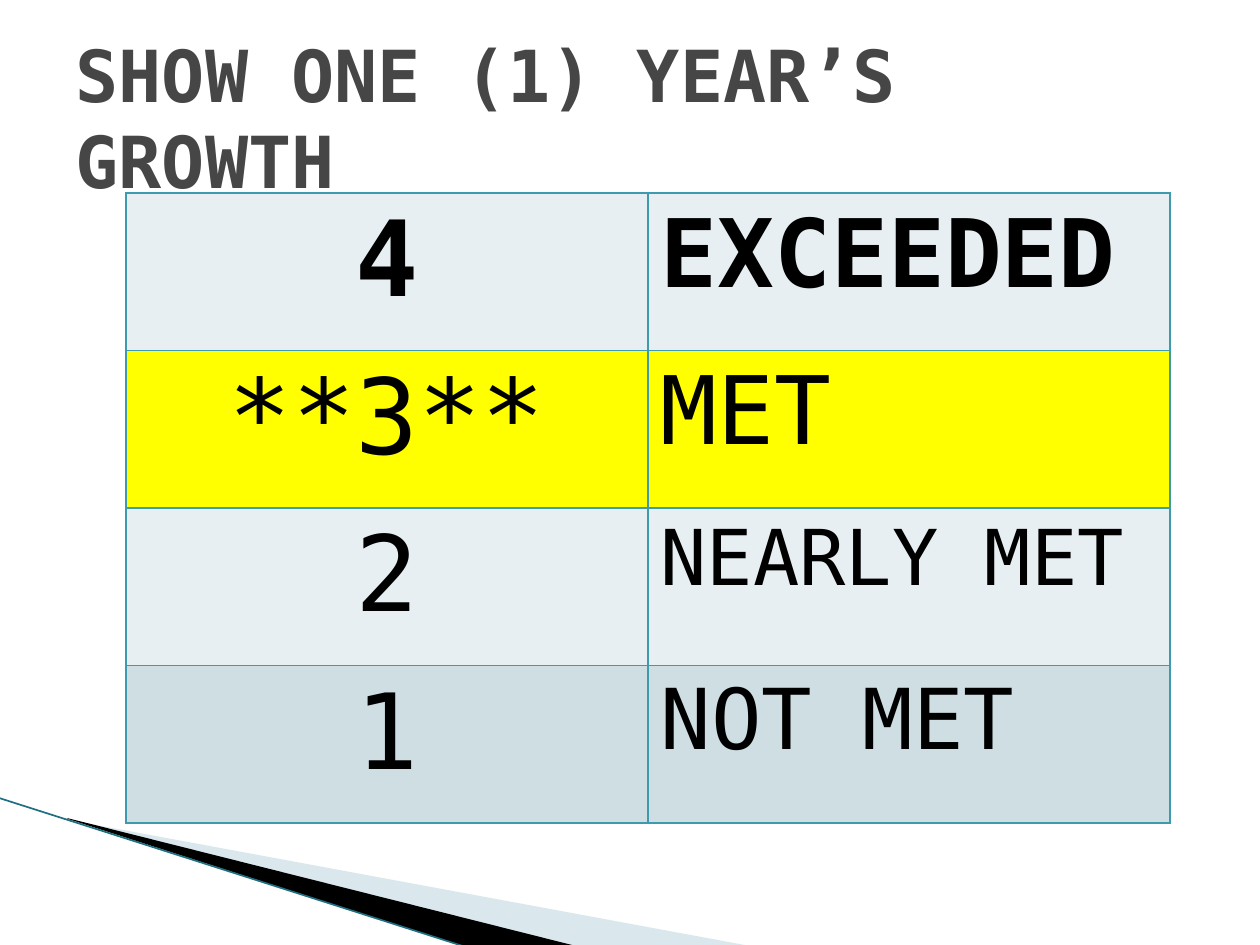
from lxml import etree
from pptx import Presentation
from pptx.dml.color import RGBColor
from pptx.enum.shapes import MSO_CONNECTOR
from pptx.enum.text import MSO_ANCHOR, MSO_AUTO_SIZE, PP_ALIGN
from pptx.oxml.ns import qn
from pptx.util import Emu, Pt

STRAIGHT = MSO_CONNECTOR.STRAIGHT
MIDDLE = MSO_ANCHOR.MIDDLE
NO_AUTOFIT = MSO_AUTO_SIZE.NONE
LEFT, CENTER = PP_ALIGN.LEFT, PP_ALIGN.CENTER

FONT = "DejaVu Sans Mono"
COLORS = {
    "title": "464646",
    "text": "000000",
    "light": "E8EFF2",
    "highlight": "FFFF00",
    "shaded": "CEDEE3",
    "border": "3E9BAE",
    "pale_wedge": "A3C7D2",
    "dark_wedge": "000000",
    "edge": "1F6F80",
}

TITLE = "SHOW ONE (1) YEAR’S GROWTH"
SCORE_SIZE = 60
LEVELS = [
    ("4", "EXCEEDED", 54, True, "light"),
    ("**3**", "MET", 54, False, "highlight"),
    ("2", "NEARLY MET", 44, False, "light"),
    ("1", "NOT MET", 48, False, "shaded"),
]
WEDGES = [
    ("pale_wedge", 40, [(69, 820), (750, 946), (575, 946), (69, 819)]),
    ("dark_wedge", 100, [(67, 818), (576, 946), (469, 948), (68, 819)]),
]
EDGE = (-1, 798, 469, 948)
TITLE_BOX = (63, 38, 1134, 158)
TABLE_BOX = (126, 193, 1044, 630)
SCALE = 914400 / 126


def px(value):
    return Emu(round(value * SCALE))


def color(name):
    return RGBColor.from_string(COLORS[name])


def write(frame, text, size, bold, color_name, align):
    paragraph = frame.paragraphs[0]
    paragraph.alignment = align
    run = paragraph.add_run()
    run.text = text
    run.font.name = FONT
    run.font.size = Pt(size)
    run.font.bold = bold
    run.font.color.rgb = color(color_name)


def add_wedge(shapes, color_name, opacity, points):
    corners = [(px(x), px(y)) for x, y in points]
    builder = shapes.build_freeform(*corners[0])
    builder.add_line_segments(corners[1:], close=True)
    wedge = builder.convert_to_shape()
    wedge.shadow.inherit = False
    wedge.fill.solid()
    wedge.fill.fore_color.rgb = color(color_name)
    wedge.line.fill.background()
    if opacity < 100:
        tint = wedge.fill._xPr.find(qn("a:solidFill"))[0]
        etree.SubElement(tint, qn("a:alpha"), val=str(opacity * 1000))


def add_edge(shapes):
    edge = shapes.add_connector(STRAIGHT, *map(px, EDGE))
    edge.line.color.rgb = color("edge")
    edge.line.width = Pt(0.95)
    etree.SubElement(edge._element.spPr, qn("a:effectLst"))


def format_cell(cell, fill_name):
    properties = cell._tc.get_or_add_tcPr()
    for side in ("lnL", "lnR", "lnT", "lnB"):
        border = etree.SubElement(properties, qn(f"a:{side}"), w=str(Pt(1)))
        fill = etree.SubElement(border, qn("a:solidFill"))
        etree.SubElement(fill, qn("a:srgbClr"), val=COLORS["border"])
    cell.fill.solid()
    cell.fill.fore_color.rgb = color(fill_name)


def add_levels(shapes):
    levels = shapes.add_table(len(LEVELS), 2, *map(px, TABLE_BOX)).table
    for row, (score, label, label_size, bold, fill_name) in enumerate(LEVELS):
        entries = [(score, SCORE_SIZE, CENTER), (label, label_size, LEFT)]
        for column, (text, size, align) in enumerate(entries):
            cell = levels.cell(row, column)
            format_cell(cell, fill_name)
            write(cell.text_frame, text, size, bold, "text", align)


def main():
    deck = Presentation()
    deck.slide_width, deck.slide_height = px(1260), px(945)
    slide = deck.slides.add_slide(deck.slide_layouts[5])

    for wedge in WEDGES:
        add_wedge(slide.shapes, *wedge)
    add_edge(slide.shapes)
    add_levels(slide.shapes)

    title = slide.shapes.title
    title.left, title.top, title.width, title.height = map(px, TITLE_BOX)
    title.text_frame.word_wrap = True
    title.text_frame.auto_size = NO_AUTOFIT
    title.text_frame.vertical_anchor = MIDDLE
    write(title.text_frame, TITLE, 41, True, "title", LEFT)

    deck.save("out.pptx")


if __name__ == "__main__":
    main()
